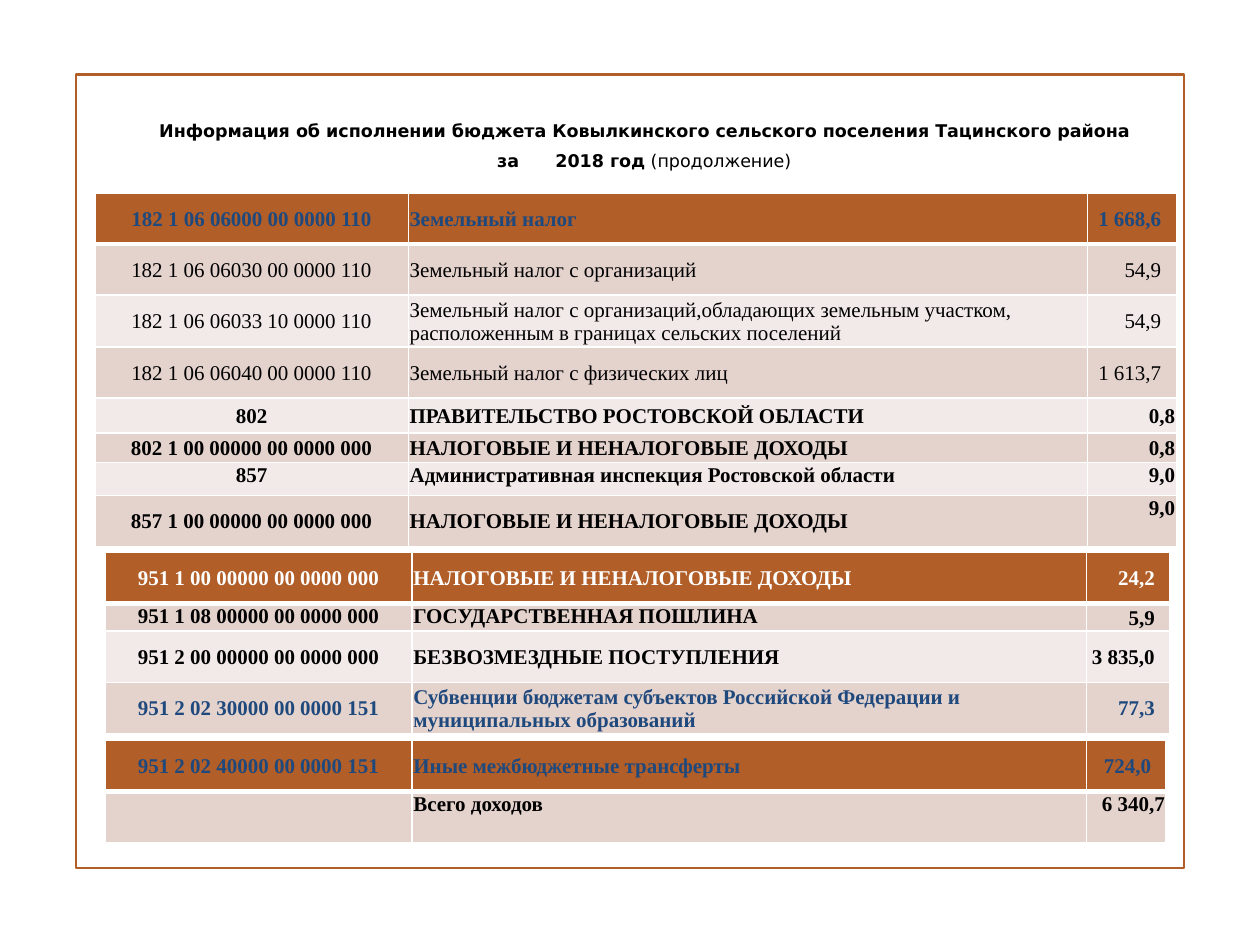
from pptx import Presentation
from pptx.dml.color import RGBColor
from pptx.enum.shapes import MSO_SHAPE as SHAPE
from pptx.enum.text import MSO_ANCHOR as ANCHOR, PP_ALIGN as ALIGN
from pptx.oxml.ns import qn
from pptx.util import Pt
from lxml.etree import SubElement

COLORS = {"rust": "B15E28", "dark_band": "E4D2CD", "light_band": "F2EAE8",
          "navy": "1F497D", "black": "000000", "white": "FFFFFF"}
ANCHORS = {"m": ANCHOR.MIDDLE, "t": ANCHOR.TOP}
ALIGNS = (ALIGN.CENTER, ALIGN.LEFT, ALIGN.RIGHT)


def rgb(name):
    return RGBColor.from_string(COLORS[name])


def write(paragraph, text, font="Times New Roman", size=12, color="black",
          bold=True, align=ALIGN.LEFT, tracking=None):
    paragraph.alignment = align
    run = paragraph.add_run()
    run.text = text
    run.font.name = font
    run.font.size = Pt(size)
    run.font.bold = bold
    run.font.color.rgb = rgb(color)
    if tracking:
        run.font._element.set("spc", str(int(tracking * 100)))


prs = Presentation()
prs.slide_width, prs.slide_height = Pt(720), Pt(540)
slide = prs.slides.add_slide(prs.slide_layouts[6])

# Page frame
frame = slide.shapes.add_shape(SHAPE.RECTANGLE, Pt(43.6), Pt(42.6), Pt(633), Pt(453.5))
frame.shadow.inherit = False
frame.fill.background()
frame.line.color.rgb = rgb("rust")
frame.line.width = Pt(1.25)

# Title; the wide gap after "за" is tracking on one space
title = slide.shapes.add_textbox(Pt(67.5), Pt(64.8), Pt(601.2), Pt(37.4)).text_frame
title.word_wrap = True
heading = dict(font="DejaVu Sans", size=10, align=ALIGN.CENTER)
write(title.paragraphs[0], "Информация об исполнении бюджета Ковылкинского "
      "сельского поселения Тацинского района", **heading)
period = title.add_paragraph()
period.space_before = Pt(5.5)
write(period, "за", **heading)
write(period, " ", tracking=17.4, **heading)
write(period, "2018 год", **heading)
write(period, " (продолжение)", bold=False, **heading)

# Row: height, (code, name, value), colour, bold, anchors, right inset of value
TALL, EDGE, INDENT = 29.25, 0.72, 8.6
land_tax = [
    (TALL, ("182 1 06 06000 00 0000 110", "Земельный налог", "1 668,6"),
     "navy", True, "mmm", INDENT),
    (TALL, ("182 1 06 06030 00 0000 110", "Земельный налог с организаций", "54,9"),
     "black", False, "mmm", INDENT),
    (TALL, ("182 1 06 06033 10 0000 110",
            "Земельный налог с организаций,обладающих земельным участком, "
            "расположенным в границах сельских поселений", "54,9"),
     "black", False, "mmm", INDENT),
    (TALL, ("182 1 06 06040 00 0000 110", "Земельный налог с физических лиц", "1 613,7"),
     "black", False, "mmm", INDENT),
    (20, ("802", "ПРАВИТЕЛЬСТВО РОСТОВСКОЙ ОБЛАСТИ", "0,8"),
     "black", True, "mmm", EDGE),
    (17, ("802 1 00 00000 00 0000 000", "НАЛОГОВЫЕ И НЕНАЛОГОВЫЕ ДОХОДЫ", "0,8"),
     "black", True, "mmm", EDGE),
    (18.75, ("857", "Административная инспекция Ростовской области", "9,0"),
     "black", True, "ttt", EDGE),
    (TALL, ("857 1 00 00000 00 0000 000", "НАЛОГОВЫЕ И НЕНАЛОГОВЫЕ ДОХОДЫ", "9,0"),
     "black", True, "mmt", EDGE),
]
settlement = [
    (TALL, ("951 1 00 00000 00 0000 000", "НАЛОГОВЫЕ И НЕНАЛОГОВЫЕ ДОХОДЫ", "24,2"),
     "white", True, "mmm", INDENT),
    (15.75, ("951 1 08 00000 00 0000 000", "ГОСУДАРСТВЕННАЯ ПОШЛИНА", "5,9"),
     "black", True, "ttm", INDENT),
    (TALL, ("951 2 00 00000 00 0000 000", "БЕЗВОЗМЕЗДНЫЕ ПОСТУПЛЕНИЯ", "3 835,0"),
     "black", True, "mmm", INDENT),
    (TALL, ("951 2 02 30000 00 0000 151",
            "Субвенции бюджетам субъектов Российской Федерации и "
            "муниципальных образований", "77,3"),
     "navy", True, "mmm", INDENT),
]
totals = [
    (TALL, ("951 2 02 40000 00 0000 151", "Иные межбюджетные трансферты", "724,0"),
     "navy", True, "mmm", INDENT),
    (TALL, ("", "Всего доходов", "6 340,7"), "black", True, "ttt", EDGE),
]

# Budget tables: left, top, column widths, rows
for left, top, widths, rows in [
    (54.2, 110.2, (179.2, 388.1, 50.7), land_tax),
    (60, 315.7, (175.5, 385.5, 47.5), settlement),
    (60, 423.2, (175.5, 385.5, 45.4), totals),
]:
    table = slide.shapes.add_table(
        len(rows), 3, Pt(left), Pt(top), Pt(sum(widths)),
        Pt(sum(row[0] for row in rows))).table
    table.first_row = table.horz_banding = False
    for column, width in zip(table.columns, widths):
        column.width = Pt(width)
    for r, (height, texts, color, bold, anchors, inset) in enumerate(rows):
        table.rows[r].height = Pt(height)
        band = "rust" if r == 0 else "dark_band" if r % 2 else "light_band"
        for c, text in enumerate(texts):
            cell = table.cell(r, c)
            cell.margin_left = cell.margin_top = Pt(EDGE)
            cell.margin_right = Pt(inset if c == 2 else EDGE)
            cell.margin_bottom = 0
            cell.vertical_anchor = ANCHORS[anchors[c]]
            # White rules, thicker below the header row
            borders = {"lnL": 1, "lnR": 1, "lnT": 3 if r == 1 else 1,
                       "lnB": 3 if r == 0 else 1}
            for side, weight in borders.items():
                rule = SubElement(cell._tc.get_or_add_tcPr(), qn("a:" + side),
                                  w=str(Pt(weight)))
                paint = SubElement(rule, qn("a:solidFill"))
                SubElement(paint, qn("a:srgbClr"), val=COLORS["white"])
            cell.fill.solid()
            cell.fill.fore_color.rgb = rgb(band)
            if text:
                write(cell.text_frame.paragraphs[0], text, color=color,
                      bold=bold, align=ALIGNS[c])

prs.save("out.pptx")
